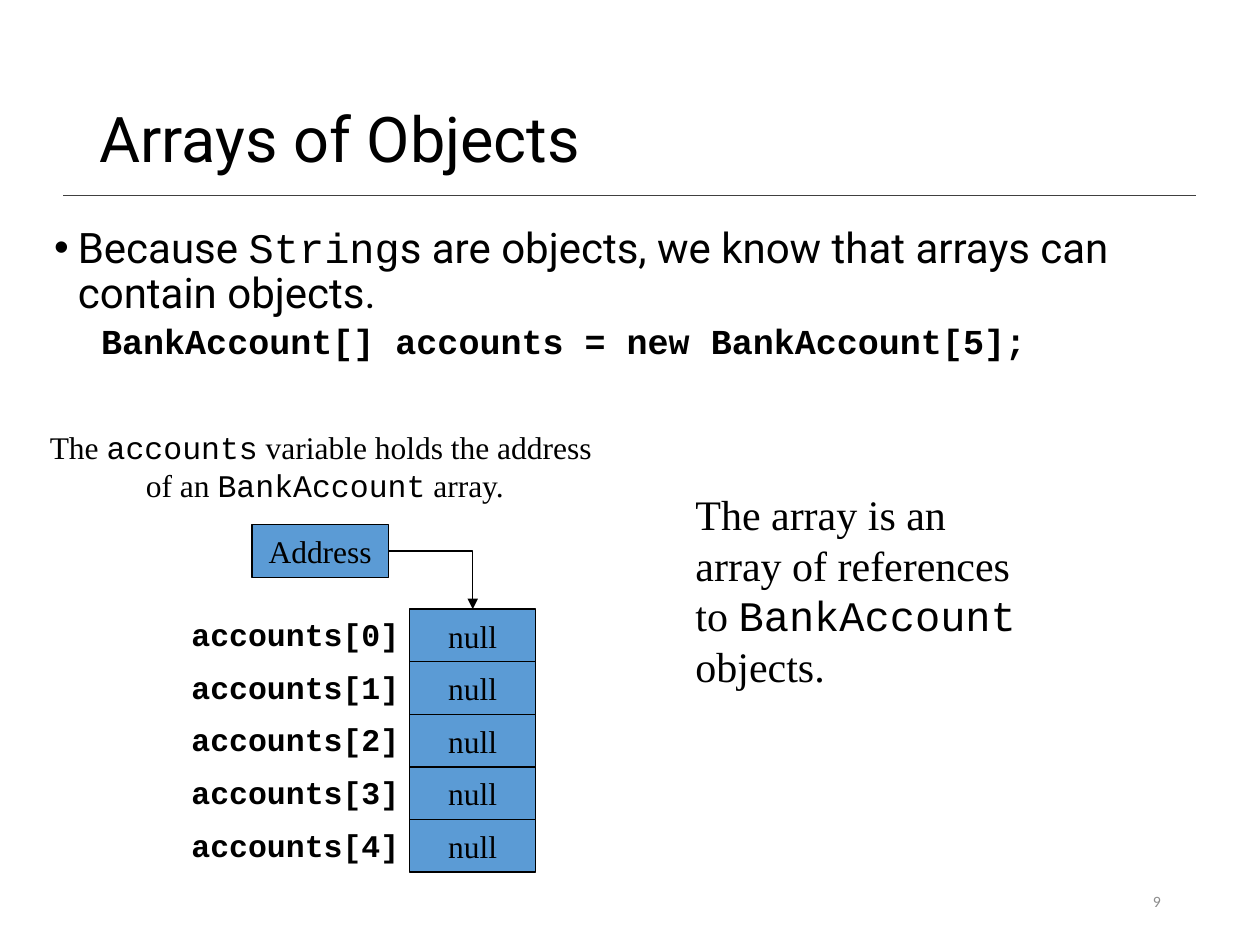
from pptx import Presentation
from pptx.dml.color import RGBColor
from pptx.enum.shapes import MSO_CONNECTOR as Connector, MSO_SHAPE as Shape
from pptx.enum.text import MSO_ANCHOR as Anchor, PP_ALIGN as Align
from pptx.oxml.ns import qn
from pptx.util import Cm, Pt
from lxml.etree import SubElement

BLACK, BLUE, RULE, GRAY = "000000", "5B9BD5", "404040", "8C8C8C"
SANS, CODE, SERIF, SMALL = "Roboto", "Courier New", "Times New Roman", "Calibri"

TITLE = [[("Arrays of Objects", SANS)]]
INTRO = [("Because ", SANS), ("String", CODE),
         ("s are objects, we know that arrays can contain objects.", SANS)]
DECLARATION = [("BankAccount[] accounts = new BankAccount[5];", CODE)]
CAPTION = [
    [("The ", SERIF), ("accounts", CODE), (" variable holds the address", SERIF)],
    [(" of an ", SERIF), ("BankAccount", CODE), (" array.", SERIF)],
]
NOTE = [[("The array is an array of references to ", SERIF),
         ("BankAccount", CODE), (" objects.", SERIF)]]
ELEMENTS = ["null"] * 5
PAGE_NUMBER = [[("9", SMALL)]]

CELL_LEFT, CELL_TOP, CELL_WIDTH, CELL_HEIGHT = 8.26, 12.28, 2.54, 1.06
LABEL_LEFT, LABEL_WIDTH, LABEL_HEIGHT = 2.54, 5.76, 1.02


def color(value):
    return RGBColor.from_string(value)


def add_spans(para, spans, size, bold=False, ink=BLACK):
    for text, font in spans:
        span = para.add_run()
        span.text = text
        span.font.name = font
        span.font.size = Pt(size)
        span.font.bold = bold
        span.font.color.rgb = color(ink)


def fill_frame(frame, paragraphs, size, align=Align.LEFT, anchor=Anchor.TOP,
               wrap=True, bold=False, ink=BLACK, spacing=None):
    frame.word_wrap = wrap
    frame.vertical_anchor = anchor
    for index, spans in enumerate(paragraphs):
        para = frame.add_paragraph() if index else frame.paragraphs[0]
        para.alignment = align
        para.line_spacing = spacing
        add_spans(para, spans, size, bold, ink)


def add_text(page, place, paragraphs, size, **style):
    box = page.shapes.add_textbox(*map(Cm, place))
    fill_frame(box.text_frame, paragraphs, size, **style)
    return box


def add_cell(page, place, text):
    cell = page.shapes.add_shape(Shape.RECTANGLE, *map(Cm, place))
    cell.shadow.inherit = False
    cell.fill.solid()
    cell.fill.fore_color.rgb = color(BLUE)
    cell.line.color.rgb = color(BLACK)
    cell.line.width = Pt(0.75)
    fill_frame(cell.text_frame, [[(text, SERIF)]], 18, align=Align.CENTER,
               anchor=Anchor.MIDDLE, wrap=False)
    return cell


def add_line(page, kind, start, end, ink, width):
    line = page.shapes.add_connector(kind, *map(Cm, start + end))
    line.line.color.rgb = color(ink)
    line.line.width = Pt(width)
    SubElement(line._element.spPr, qn("a:effectLst"))
    return line


def set_indent(para, margin, bullet=None):
    props = para._p.get_or_add_pPr()
    props.set("marL", str(Cm(margin)))
    props.set("indent", str(Cm(-0.48)))
    if bullet:
        SubElement(props, qn("a:buFont")).set("typeface", "Arial")
        SubElement(props, qn("a:buChar")).set("char", bullet)
    else:
        SubElement(props, qn("a:buNone"))


def add_body(page):
    box = add_text(page, (0.84, 4.45, 23.04, 4.09), [INTRO], 24, spacing=0.9)
    first = box.text_frame.paragraphs[0]
    first.space_before = Pt(7.5)
    set_indent(first, 0.48, "•")
    second = box.text_frame.add_paragraph()
    second.line_spacing = 0.9
    second.space_before = Pt(3.8)
    second.level = 1
    set_indent(second, 1.43)
    add_spans(second, DECLARATION, 20, bold=True)


def add_array(page):
    address = add_cell(page, (5.08, 10.58, 2.75, CELL_HEIGHT), "Address")
    cells = []
    for index, value in enumerate(ELEMENTS):
        top = CELL_TOP + index * CELL_HEIGHT
        cells.append(add_cell(page, (CELL_LEFT, top, CELL_WIDTH, CELL_HEIGHT), value))
        add_text(page, (LABEL_LEFT, top, LABEL_WIDTH, LABEL_HEIGHT),
                 [[(f"accounts[{index}]", CODE)]], 18, align=Align.RIGHT, bold=True)
    arrow = add_line(page, Connector.ELBOW, (7.83, 11.11),
                     (CELL_LEFT + CELL_WIDTH / 2, CELL_TOP), BLACK, 0.75)
    arrow.begin_connect(address, 3)
    arrow.end_connect(cells[0], 0)
    arrow._element.spPr.find(qn("a:prstGeom")).set("prst", "bentConnector2")
    SubElement(arrow.line._get_or_add_ln(), qn("a:tailEnd")).set("type", "triangle")


def main():
    deck = Presentation()
    deck.slide_width, deck.slide_height = Cm(25.4), Cm(19.05)
    page = deck.slides.add_slide(deck.slide_layouts[6])
    add_line(page, Connector.STRAIGHT, (1.27, 3.94), (24.1, 3.94), RULE, 1)
    add_text(page, (1.75, 1.02, 21.9, 3.68), TITLE, 36,
             anchor=Anchor.MIDDLE, spacing=0.9)
    add_body(page)
    add_text(page, (0.74, 8.51, 11.46, 1.78), CAPTION, 18,
             align=Align.CENTER, wrap=False)
    add_array(page)
    add_text(page, (13.77, 9.73, 6.99, 4.32), NOTE, 24)
    add_text(page, (17.93, 17.65, 5.72, 1.02), PAGE_NUMBER, 9,
             align=Align.RIGHT, anchor=Anchor.MIDDLE, ink=GRAY)
    deck.save("out.pptx")


if __name__ == "__main__":
    main()
